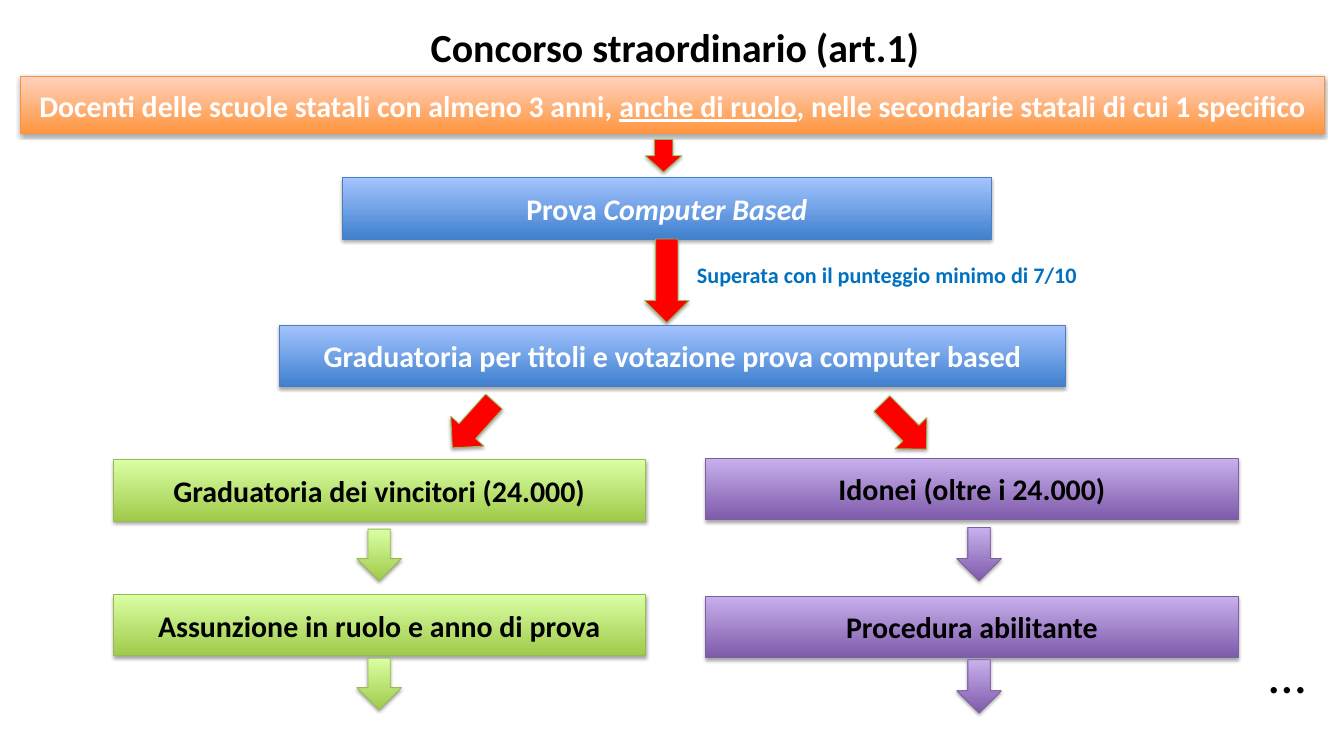
from lxml import etree
from pptx import Presentation
from pptx.dml.color import RGBColor
from pptx.enum.shapes import MSO_SHAPE as Preset
from pptx.enum.text import MSO_ANCHOR as Anchor, MSO_AUTO_SIZE as AutoSize, PP_ALIGN as Align
from pptx.oxml.ns import qn
from pptx.util import Emu, Pt

EMU_PER_PX = 9144  # 100 px to the inch

# Palettes: fill stops from bottom to top, then the outline
BLUE = (("3F80CE", "A4C4FF"), "4B7EBC")
ORANGE = (("FF953E", "FFD2BD"), "F69240")
GREEN = (("A0CA4A", "DAFFA5"), "98B955")
PURPLE = (("7F5BAB", "C8B0ED"), "7D60A0")
RED = (("FF0000",), "98B955")


def px(length):
    return Emu(length * EMU_PER_PX)


def colour(hex_value):
    return RGBColor.from_string(hex_value)


class FlowSlide:
    font_name = "Calibri"
    box_size = 27

    def __init__(self, presentation):
        self.slide = presentation.slides.add_slide(presentation.slide_layouts[0])

    def add_text(self, frame, runs, size, hex_value, align=Align.LEFT, bold=True):
        """Each run is a pair: the text and its extra style, if any."""
        frame.word_wrap = True
        paragraph = frame.paragraphs[0]
        paragraph.alignment = align
        for text, style in runs:
            run = paragraph.add_run()
            run.text = text
            font = run.font
            font.name, font.size, font.bold = self.font_name, Pt(size), bold
            font.italic = style == "italic"
            font.underline = style == "underline"
            font.color.rgb = colour(hex_value)

    def title(self, text, left, top, width, height):
        title = self.slide.shapes.title
        title.left, title.top, title.width, title.height = map(px, (left, top, width, height))
        frame = title.text_frame
        frame.auto_size = AutoSize.NONE
        frame.vertical_anchor = Anchor.MIDDLE
        self.add_text(frame, [(text, "")], 36, "000000", Align.CENTER)
        subtitle = self.slide.placeholders[1].element
        subtitle.getparent().remove(subtitle)

    def preset(self, kind, left, top, width, height, palette):
        shape = self.slide.shapes.add_shape(kind, *map(px, (left, top, width, height)))
        stops, outline = palette
        if len(stops) == 1:
            shape.fill.solid()
            shape.fill.fore_color.rgb = colour(stops[0])
        else:
            shape.fill.gradient()
            shape.fill.gradient_angle = 90
            for stop, hex_value in zip(shape.fill.gradient_stops, stops):
                stop.color.rgb = colour(hex_value)
        shape.line.color.rgb = colour(outline)
        shape.line.width = Pt(0.75)
        self.add_shadow(shape)
        return shape

    def add_shadow(self, shape):
        shape.shadow.inherit = False
        effects = shape.element.spPr.find(qn("a:effectLst"))
        shadow = etree.SubElement(effects, qn("a:outerShdw"), blurRad="40000", dist="23000",
                                  dir="5400000", rotWithShape="0")
        black = etree.SubElement(shadow, qn("a:srgbClr"), val="000000")
        etree.SubElement(black, qn("a:alpha"), val="35000")

    def box(self, runs, left, top, width, palette, hex_value, height=77):
        shape = self.preset(Preset.RECTANGLE, left, top, width, height, palette)
        shape.text_frame.vertical_anchor = Anchor.MIDDLE
        self.add_text(shape.text_frame, runs, self.box_size, hex_value, Align.CENTER)

    def arrow(self, left, top, height, palette, width=56, rotation=0):
        shape = self.preset(Preset.DOWN_ARROW, left, top, width, height, palette)
        shape.rotation = rotation

    def label(self, text, left, top, width, height, size, hex_value, bold=True):
        text_box = self.slide.shapes.add_textbox(*map(px, (left, top, width, height)))
        self.add_text(text_box.text_frame, [(text, "")], size, hex_value, bold=bold)


def main():
    presentation = Presentation()
    presentation.slide_width, presentation.slide_height = px(1687), px(945)
    flow = FlowSlide(presentation)

    flow.title("Concorso straordinario (art.1)", 42, 5, 1611, 108)

    # Shared path from the requirements to the ranking
    flow.box([("Prova ", ""), ("Computer Based", "italic")], 430, 223, 814, BLUE, "FFFFFF")
    flow.arrow(809, 300, 105, RED)
    flow.label("Superata con il punteggio minimo di 7/10", 865, 323, 589, 44, 20, "0070C0")
    flow.box([("Graduatoria per titoli e votazione prova computer based", "")],
             351, 408, 986, BLUE, "FFFFFF")
    flow.box([("Docenti delle scuole statali con almeno 3 anni, ", ""),
              ("anche di ruolo", "underline"),
              (", nelle secondarie statali di cui 1 specifico", "")],
             26, 96, 1636, ORANGE, "FFFFFF", height=72)
    flow.arrow(810, 175, 41, RED, width=46)

    # Split towards the two outcomes
    flow.arrow(566, 494, 78, RED, rotation=42)
    flow.arrow(1107, 495, 80, RED, rotation=315.5)

    # Outcome columns: palette, box left, arrow left, arrow height, then steps
    # of text, box top and arrow top
    columns = [
        (GREEN, 142, 448, 65, [("Graduatoria dei vincitori (24.000)", 577, 664),
                               ("Assunzione in ruolo e anno di prova", 746, 826)]),
        (PURPLE, 886, 1201, 67, [("Idonei (oltre i 24.000)", 575, 662),
                                 ("Procedura abilitante", 748, 828)]),
    ]
    for palette, box_left, arrow_left, arrow_height, steps in columns:
        for text, box_top, arrow_top in steps:
            flow.box([(text, "")], box_left, box_top, 668, palette, "000000")
            flow.arrow(arrow_left, arrow_top, arrow_height, palette)

    # Continuation mark
    flow.label("…", 1583, 799, 88, 91, 48, "000000", bold=False)

    presentation.save("out.pptx")


if __name__ == "__main__":
    main()
